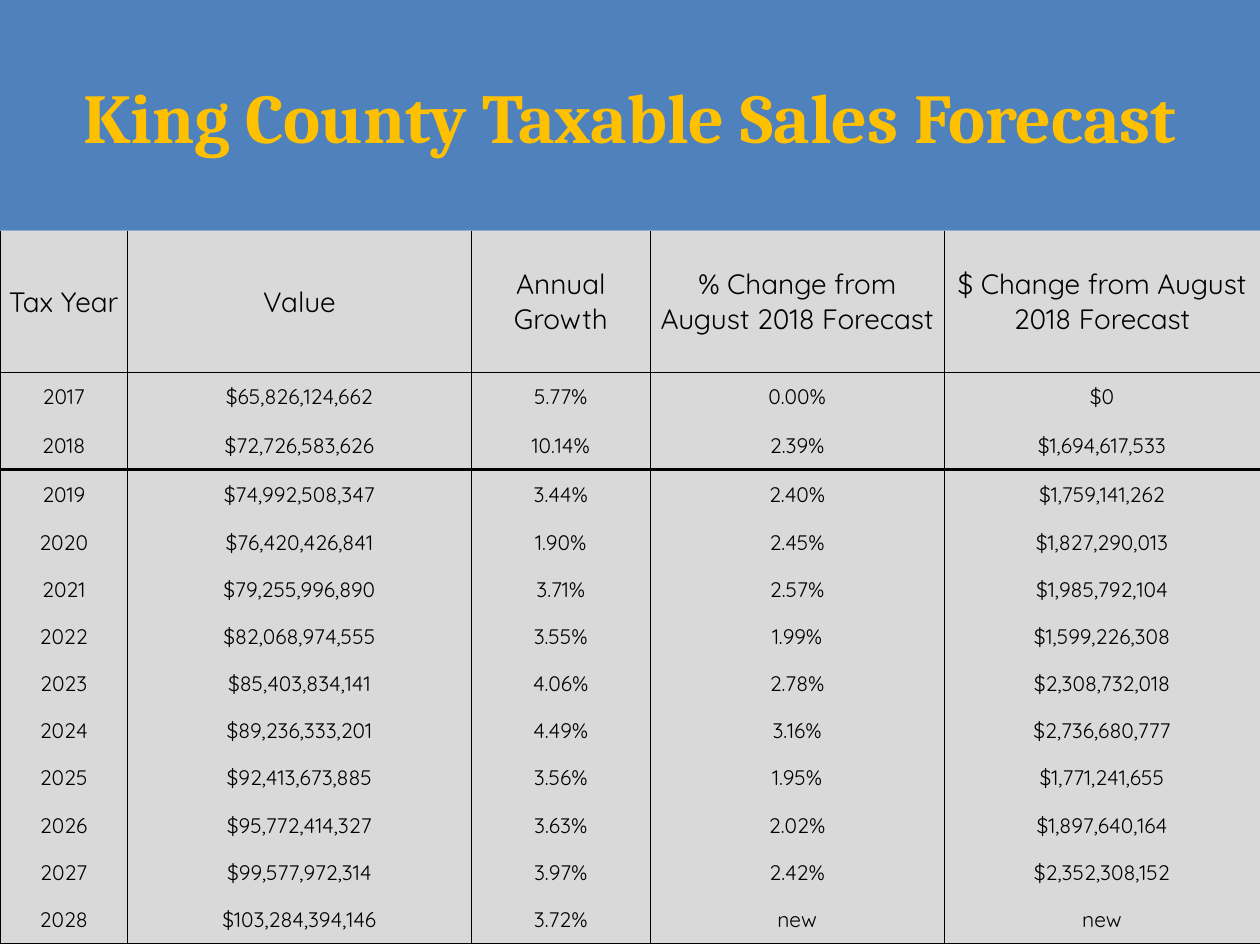
from dataclasses import astuple, dataclass

from lxml.etree import SubElement
from pptx import Presentation
from pptx.dml.color import RGBColor
from pptx.enum.shapes import MSO_SHAPE
from pptx.enum.text import MSO_ANCHOR, PP_ALIGN
from pptx.oxml.ns import qn
from pptx.table import _Cell
from pptx.text.text import TextFrame
from pptx.util import Cm, Pt

COLORS = {"banner": "4F81BD", "title": "FFC000", "cell": "D9D9D9", "ink": "000000"}
WIDTH, HEIGHT, TOP = 25.4, 19.05, 4.65
COLS = [2.57, 6.93, 3.61, 5.92, 6.37]
ROWS = [2.86, 0.97, 0.99, 0.99] + [0.95] * 9
THIN, THICK = 0.5, 2
# Width in points of the line below each row that has one
RULES = {0: THIN, 2: THICK, len(ROWS) - 1: THIN}


@dataclass
class Year:
    year: str
    value: str
    growth: str
    percent: str
    change: str


HEADER = Year("Tax Year", "Value", "Annual Growth",
              "% Change from August 2018 Forecast",
              "$ Change from August 2018 Forecast")
YEARS = [
    Year("2017", "$65,826,124,662", "5.77%", "0.00%", "$0"),
    Year("2018", "$72,726,583,626", "10.14%", "2.39%", "$1,694,617,533"),
    Year("2019", "$74,992,508,347", "3.44%", "2.40%", "$1,759,141,262"),
    Year("2020", "$76,420,426,841", "1.90%", "2.45%", "$1,827,290,013"),
    Year("2021", "$79,255,996,890", "3.71%", "2.57%", "$1,985,792,104"),
    Year("2022", "$82,068,974,555", "3.55%", "1.99%", "$1,599,226,308"),
    Year("2023", "$85,403,834,141", "4.06%", "2.78%", "$2,308,732,018"),
    Year("2024", "$89,236,333,201", "4.49%", "3.16%", "$2,736,680,777"),
    Year("2025", "$92,413,673,885", "3.56%", "1.95%", "$1,771,241,655"),
    Year("2026", "$95,772,414,327", "3.63%", "2.02%", "$1,897,640,164"),
    Year("2027", "$99,577,972,314", "3.97%", "2.42%", "$2,352,308,152"),
    Year("2028", "$103,284,394,146", "3.72%", "new", "new"),
]


def color(name: str) -> RGBColor:
    return RGBColor.from_string(COLORS[name])


def write(frame: TextFrame, text: str, face: str, size: float, ink: str,
          bold: bool = False) -> None:
    frame.text = text
    frame.word_wrap = True
    para = frame.paragraphs[0]
    para.alignment = PP_ALIGN.CENTER
    font = para.runs[0].font
    font.name, font.size, font.bold = face, Pt(size), bold
    font.color.rgb = color(ink)


def border(cell: _Cell, side: str, width: float) -> None:
    """Line one side (L, R, T or B) of a cell; width 0 hides the line."""
    line = SubElement(cell._tc.get_or_add_tcPr(), qn(f"a:ln{side}"), w=str(Pt(width)))
    if width:
        fill = SubElement(line, qn("a:solidFill"))
        SubElement(fill, qn("a:srgbClr"), val=COLORS["ink"])
    else:
        SubElement(line, qn("a:noFill"))


def draw_cell(cell: _Cell, text: str, row: int) -> None:
    write(cell.text_frame, text, "Quicksand", 12 if row else 16, "ink")
    cell.vertical_anchor = MSO_ANCHOR.MIDDLE
    cell.margin_left = cell.margin_right = cell.margin_top = cell.margin_bottom = 0
    sides = {"L": THIN, "R": THIN, "T": RULES.get(row - 1, 0), "B": RULES.get(row, 0)}
    for side, width in sides.items():
        border(cell, side, width)
    cell.fill.solid()
    cell.fill.fore_color.rgb = color("cell")


def draw_title(slide) -> None:
    banner = slide.shapes.add_shape(MSO_SHAPE.RECTANGLE, 0, 0, Cm(WIDTH), Cm(TOP))
    banner.shadow.inherit = False
    banner.fill.solid()
    banner.fill.fore_color.rgb = color("banner")
    banner.line.fill.background()
    banner.text_frame.vertical_anchor = MSO_ANCHOR.MIDDLE
    write(banner.text_frame, "King County Taxable Sales Forecast",
          "Cambria", 40, "title", bold=True)


def draw_table(slide) -> None:
    table = slide.shapes.add_table(len(ROWS), len(COLS), 0, Cm(TOP),
                                   Cm(WIDTH), Cm(sum(ROWS))).table
    table.first_row = table.horz_banding = False
    for col, width in zip(table.columns, COLS):
        col.width = Cm(width)
    for i, (row, height, year) in enumerate(zip(table.rows, ROWS, [HEADER] + YEARS)):
        row.height = Cm(height)
        for cell, text in zip(row.cells, astuple(year)):
            draw_cell(cell, text, i)


def main() -> None:
    deck = Presentation()
    deck.slide_width, deck.slide_height = Cm(WIDTH), Cm(HEIGHT)
    slide = deck.slides.add_slide(deck.slide_layouts[6])
    draw_title(slide)
    draw_table(slide)
    deck.save("out.pptx")


if __name__ == "__main__":
    main()
